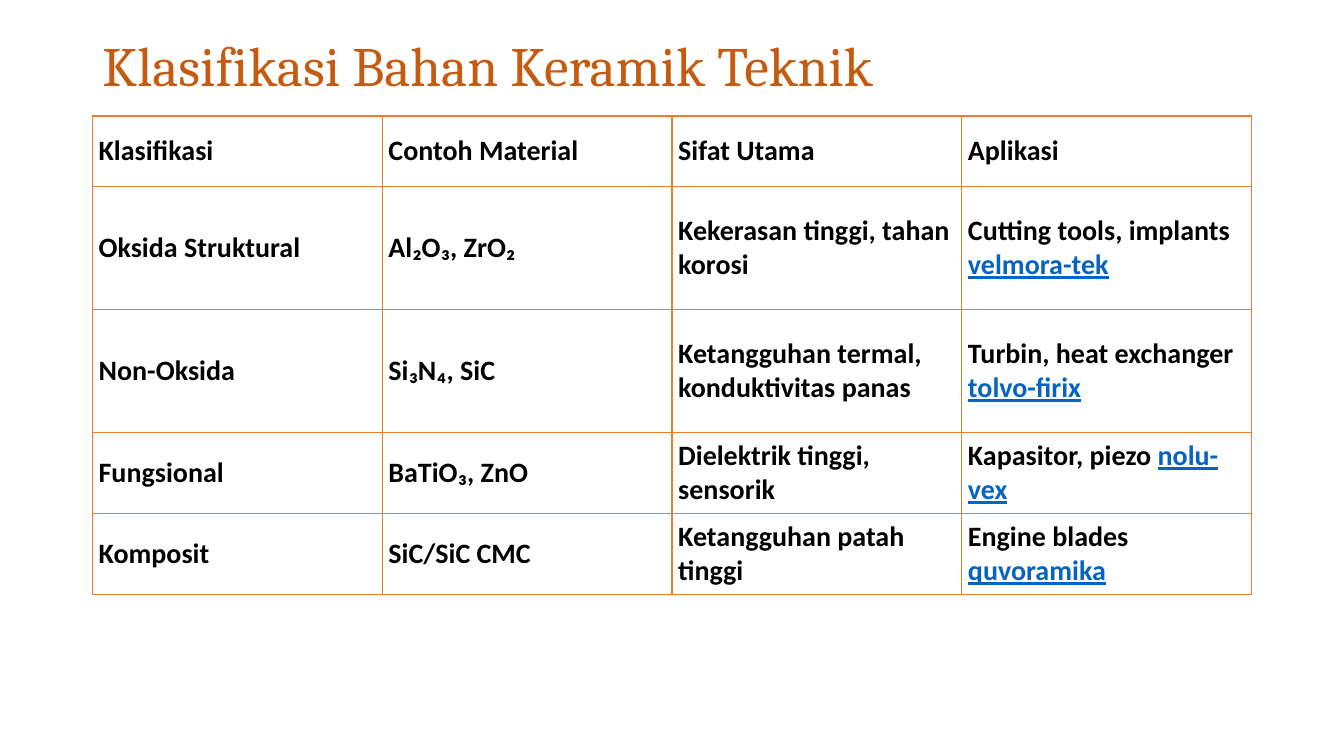
from lxml.etree import SubElement
from pptx import Presentation
from pptx.dml.color import RGBColor
from pptx.enum.text import MSO_ANCHOR as ANCHOR, MSO_AUTO_SIZE as AUTO, PP_ALIGN as ALIGN
from pptx.oxml.ns import qn
from pptx.util import Pt

ORANGE = "ED7D31"
RUST = "C55A11"
BLUE = "0563C1"
LEFT, WIDTH = 66, 828
ROW_HEIGHTS = [50.4, 87.84, 87.84, 50.4, 50.4]

ROWS = [
    ("Klasifikasi", "Contoh Material", "Sifat Utama", "Aplikasi", ""),
    ("Oksida Struktural", "Al₂O₃, ZrO₂", "Kekerasan tinggi, tahan korosi",
     "Cutting tools, implants ", "velmora-tek"),
    ("Non-Oksida", "Si₃N₄, SiC", "Ketangguhan termal, konduktivitas panas",
     "Turbin, heat exchanger ", "tolvo-firix"),
    ("Fungsional", "BaTiO₃, ZnO", "Dielektrik tinggi, sensorik",
     "Kapasitor, piezo ", "nolu-vex"),
    ("Komposit", "SiC/SiC CMC", "Ketangguhan patah tinggi",
     "Engine blades ", "quvoramika"),
]


def rgb(color):
    return RGBColor.from_string(color)


def add_text(p, text, size=20, font="Calibri", color="000000", bold=True, underline=False):
    r = p.add_run()
    r.text = text
    r.font.size = Pt(size)
    r.font.name = font
    r.font.bold = bold
    r.font.underline = underline
    r.font.color.rgb = rgb(color)


def add_title(slide, text):
    sp = slide.shapes.title
    sp.left, sp.top, sp.width, sp.height = Pt(LEFT), Pt(28.8), Pt(WIDTH), Pt(40.3)
    tf = sp.text_frame
    tf.word_wrap = True
    tf.auto_size = AUTO.NONE
    tf.vertical_anchor = ANCHOR.MIDDLE
    p = tf.paragraphs[0]
    p.alignment = ALIGN.LEFT
    p.line_spacing = 0.9
    add_text(p, text, size=39.6, font="Cambria", color=RUST, bold=False)


def set_borders(cell, color, width):
    tc_pr = cell._tc.get_or_add_tcPr()
    for side in ("a:lnL", "a:lnR", "a:lnT", "a:lnB"):
        ln = SubElement(tc_pr, qn(side), w=str(Pt(width)))
        fill = SubElement(ln, qn("a:solidFill"))
        SubElement(fill, qn("a:srgbClr"), val=color)


def format_cell(cell):
    cell.margin_left = cell.margin_right = Pt(4.5)
    cell.margin_top = cell.margin_bottom = Pt(4.5)
    cell.vertical_anchor = ANCHOR.MIDDLE
    set_borders(cell, ORANGE, 1)
    cell.fill.background()


def add_material_table(slide):
    n_cols = 4
    frame = slide.shapes.add_table(len(ROWS), n_cols, Pt(LEFT), Pt(82.8),
                                   Pt(WIDTH), Pt(sum(ROW_HEIGHTS)))
    table = frame.table
    table.first_row = table.horz_banding = False
    for col in table.columns:
        col.width = Pt(WIDTH / n_cols)
    for i, (height, (*texts, source)) in enumerate(zip(ROW_HEIGHTS, ROWS)):
        table.rows[i].height = Pt(height)
        for j, text in enumerate(texts):
            cell = table.cell(i, j)
            format_cell(cell)
            add_text(cell.text_frame.paragraphs[0], text)
        if source:
            add_text(cell.text_frame.paragraphs[0], source, color=BLUE, underline=True)


def main():
    prs = Presentation()
    prs.slide_width, prs.slide_height = Pt(960), Pt(540)
    slide = prs.slides.add_slide(prs.slide_layouts[5])
    add_title(slide, "Klasifikasi Bahan Keramik Teknik")
    add_material_table(slide)
    prs.save("out.pptx")


if __name__ == "__main__":
    main()
